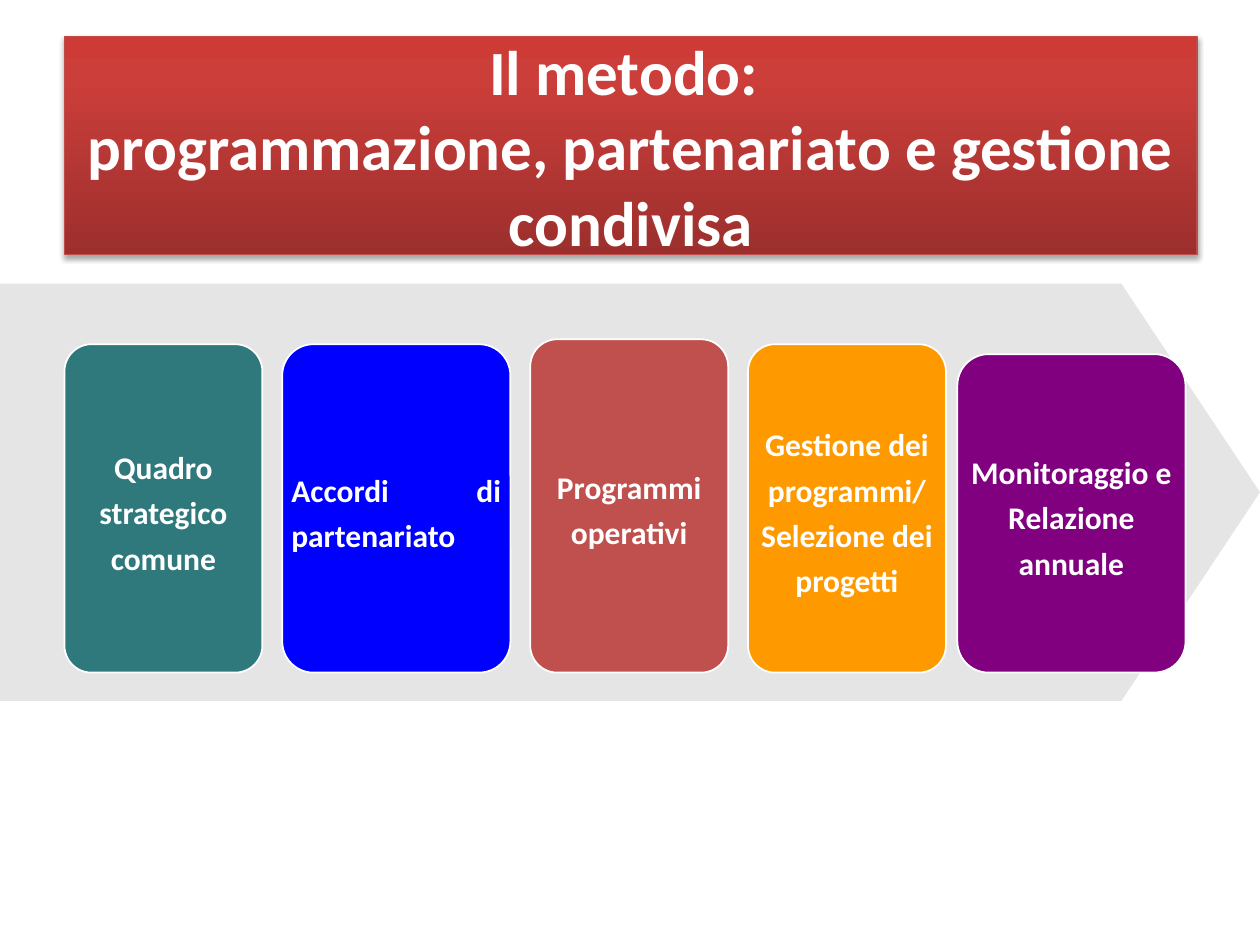
import copy

import pptx
import pptx.dml.color
import pptx.enum.dml
import pptx.enum.shapes
import pptx.enum.text
import pptx.oxml
import pptx.oxml.ns
import pptx.util
from pptx.util import Cm, Pt

COLOURS = {
    "white": "FFFFFF",
    "black": "000000",
    "banner_dark": "9C2F2D",
    "banner_mid": "CB3E3A",
    "banner_light": "CE3B37",
    "banner_line": "BF4C48",
    "teal": "2F797D",
    "blue": "0000FF",
    "red": "C0504D",
    "orange": "FF9900",
    "purple": "800080",
}
FONT = "Calibri"
CARD_BOTTOM = 7.84  # below the top of the arrow, in cm

# text, colour, gap before, width, top below the arrow's top (cm)
STEPS = [
    ("Quadro strategico comune", "teal", 1.3, 3.99, 1.22),
    ("Accordi di partenariato", "blue", 0.4, 4.6, 1.22),
    ("Programmi operativi", "red", 0.4, 3.99, 1.12),
    ("Gestione dei programmi/\vSelezione dei progetti", "orange", 0.4, 3.99, 1.22),
    ("Monitoraggio e\vRelazione annuale", "purple", 0.23, 4.6, 1.42),
]


def rgb(name):
    return pptx.dml.color.RGBColor.from_string(COLOURS[name])


def write_text(shape, text, size, align):
    """Put bold white text in the vertical middle of a shape."""
    frame = shape.text_frame
    frame.text = text
    frame.word_wrap = True
    frame.auto_size = pptx.enum.text.MSO_AUTO_SIZE.NONE
    frame.vertical_anchor = pptx.enum.text.MSO_ANCHOR.MIDDLE
    paragraph = frame.paragraphs[0]
    paragraph.alignment = align
    for run in paragraph.runs:
        run.font.name = FONT
        run.font.size = Pt(size)
        run.font.bold = True
        run.font.color.rgb = rgb("white")
    return frame


def fill_banner(banner):
    """Give the banner its three-stop gradient, dark at the bottom."""
    banner.fill.gradient()
    banner.fill.gradient_angle = 90
    stop_list = banner._element.spPr.find(".//" + pptx.oxml.ns.qn("a:gsLst"))
    stop_list.append(copy.deepcopy(stop_list[-1]))
    stops = [("banner_dark", 0), ("banner_mid", 0.8), ("banner_light", 1)]
    for stop, (colour, position) in zip(banner.fill.gradient_stops, stops):
        stop.color.rgb = rgb(colour)
        stop.position = position


def cast_shadow(shape):
    shape.shadow.inherit = False
    effects = shape._element.spPr.find(pptx.oxml.ns.qn("a:effectLst"))
    effects.append(pptx.oxml.parse_xml(
        f'<a:outerShdw {pptx.oxml.ns.nsdecls("a")} blurRad="{Pt(3.1)}" '
        f'dist="{Pt(1.8)}" dir="5400000" rotWithShape="0">'
        f'<a:srgbClr val="{COLOURS["black"]}"><a:alpha val="35000"/></a:srgbClr>'
        '</a:outerShdw>'))


def build_title(slide, left, top, width, height):
    title = slide.shapes.title
    title.left, title.top, title.width, title.height = left, top, width, height
    fill_banner(title)
    title.line.color.rgb = rgb("banner_line")
    title.line.width = Pt(0.75)
    cast_shadow(title)
    write_text(title, "Il metodo: \vprogrammazione, partenariato e gestione condivisa",
               36, pptx.enum.text.PP_ALIGN.CENTER)


def add_filled(slide, kind, box, colour, adjustment):
    shape = slide.shapes.add_shape(kind, *box)
    shape.adjustments[0] = adjustment
    shape.shadow.inherit = False
    shape.fill.solid()
    shape.fill.fore_color.rgb = rgb(colour)
    return shape


def add_step(slide, box, text, colour, align):
    card = add_filled(slide, pptx.enum.shapes.MSO_SHAPE.ROUNDED_RECTANGLE,
                      box, colour, 0.137)
    card.line.color.rgb = rgb("white")
    card.line.width = Pt(1)
    frame = write_text(card, text, 18, align)
    frame.margin_left = frame.margin_right = 0
    frame.paragraphs[0].line_spacing = 1.2


def build_process(slide, left, top, width, height):
    """Draw the pale arrow and the row of steps that share one bottom edge."""
    arrow = add_filled(slide, pptx.enum.shapes.MSO_SHAPE.PENTAGON,
                       (left, top, width, height), "black", 0.332)
    arrow.line.fill.background()
    tint = arrow._element.spPr.find(".//" + pptx.oxml.ns.qn("a:srgbClr"))
    tint.append(pptx.oxml.parse_xml(
        f'<a:alpha {pptx.oxml.ns.nsdecls("a")} val="10000"/>'))

    aligns = pptx.enum.text.PP_ALIGN
    step_left = left
    for text, colour, gap, step_width, offset in STEPS:
        step_left += Cm(gap)
        box = (step_left, top + Cm(offset), Cm(step_width), Cm(CARD_BOTTOM - offset))
        align = aligns.JUSTIFY if colour == "blue" else aligns.CENTER
        add_step(slide, box, text, colour, align)
        step_left += Cm(step_width)


def main():
    deck = pptx.Presentation()
    deck.slide_width, deck.slide_height = Cm(25.4), Cm(19.05)
    slide = deck.slides.add_slide(deck.slide_layouts[5])
    build_title(slide, Cm(1.3), Cm(0.74), Cm(22.83), Cm(4.39))
    build_process(slide, Cm(0), Cm(5.72), Cm(25.4), Cm(8.41))
    deck.save("out.pptx")


if __name__ == "__main__":
    main()
